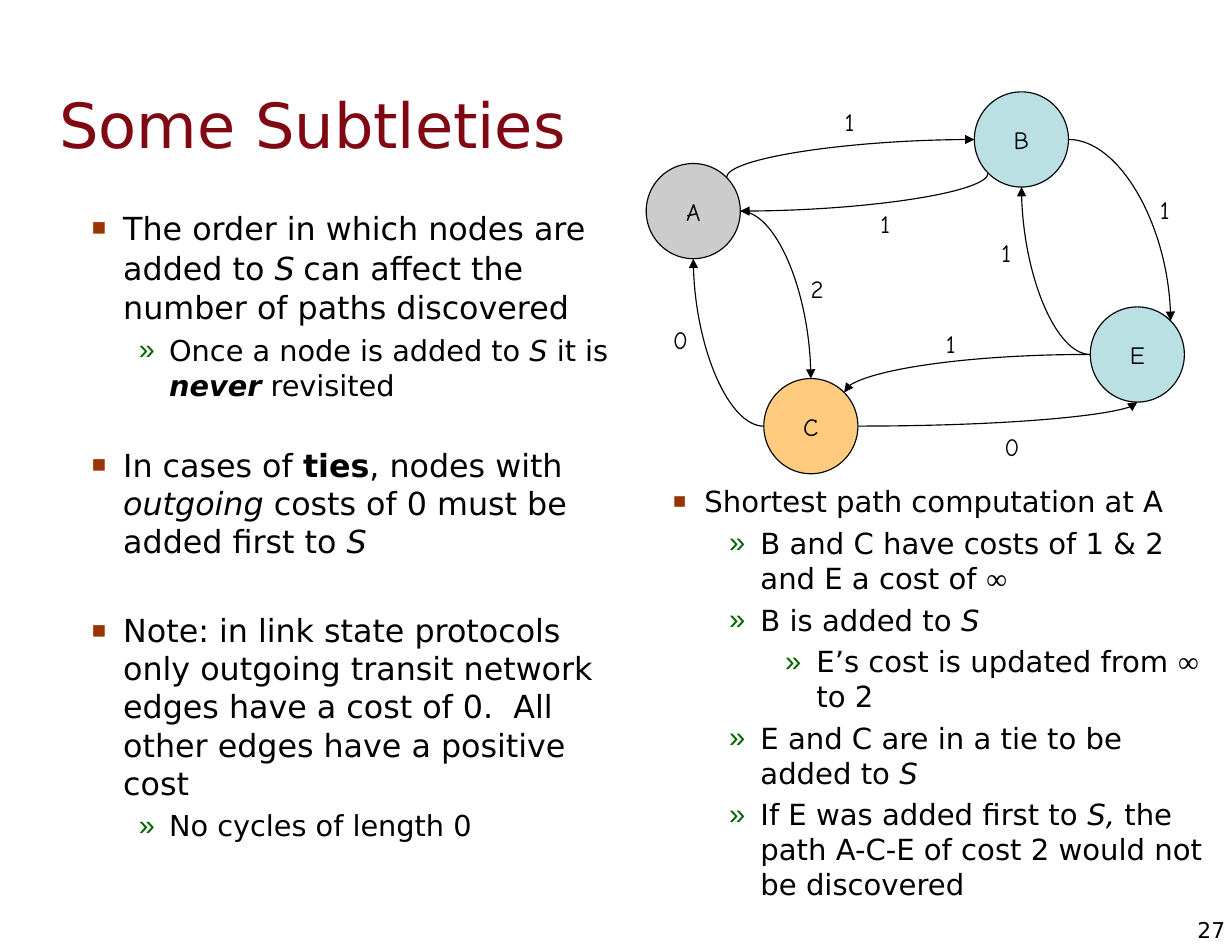
from math import sqrt

from lxml.etree import SubElement
from pptx import Presentation
from pptx.dml.color import RGBColor
from pptx.enum.shapes import MSO_CONNECTOR, MSO_SHAPE
from pptx.enum.text import MSO_ANCHOR as ANCHOR, MSO_AUTO_SIZE as FIT, PP_ALIGN as ALIGN
from pptx.oxml.ns import qn
from pptx.util import Inches, Pt

COLORS = {
    "title": "7F0813", "text": "000000", "square": "993300", "chevron": "006600",
    "root": "CCCCCC", "settled": "BBE0E3", "tied": "FF9900",
}
BODY, HAND, SERIF = "DejaVu Sans", "Comic Neue", "Times New Roman"
COLS, ROWS = 110, 85
D = 1 / sqrt(2)
PORTS = {"N": (0, -1), "S": (0, 1), "E": (1, 0), "W": (-1, 0), "NE": (D, -D), "SW": (-D, D)}
RX, RY = 4.2, 4.25

NODES = {
    "A": (61.9, 18.85, "root", None),
    "B": (91.2, 12.45, "settled", None),
    "E": (101.55, 31.65, "settled", None),
    "C": (72.4, 38.05, "tied", 50),
}
EDGES = [
    ("A", "NE", "B", "W"), ("B", "SW", "A", "E"), ("B", "E", "E", "NE"), ("E", "W", "B", "S"),
    ("E", "W", "C", "NE"), ("C", "E", "E", "S"), ("C", "W", "A", "S"), ("A", "E", "C", "N"),
]
COSTS = [
    ("1", 75.85, 8.9), ("1", 79.05, 18), ("1", 89.85, 20.6), ("1", 84.9, 28.7),
    ("0", 90.35, 37.9), ("2", 72.95, 23.8), ("0", 60.75, 28.4), ("1", 104, 16.8),
]
SUBTLETIES = [
    (0, 0, [("The order in which nodes are added to ", ""), ("S", "i"), (" ", "t"),
            ("can affect the number of paths discovered", "")]),
    (1, 4.3, [("Once a node is added to ", ""), ("S ", "i"), ("it is ", ""),
              ("never", "bi"), (" revisited", "")]),
    (0, 28, [("In cases of ", ""), ("ties", "b"), (", nodes with ", ""), ("outgoing", "i"),
             (" costs of 0 must be added first to ", ""), ("S", "i")]),
    (0, 33, [("Note: in link state protocols only outgoing transit network edges "
              "have a cost of 0.  All other edges have a positive cost", "")]),
    (1, 4.3, [("No cycles of length 0", "")]),
]
COMPUTATION = [
    (0, 0, [("Shortest path computation at A", "")]),
    (1, 4.3, [("B and C have costs of 1 & 2 and E a cost of ", ""), ("∞", "t")]),
    (1, 4.3, [("B is added to ", ""), ("S", "i")]),
    (2, 4.3, [("E’s cost is updated from ", ""), ("∞", "t"), (" to 2", "")]),
    (1, 4.3, [("E and C are in a tie to be added to ", ""), ("S", "i")]),
    (1, 4.3, [("If E was added first to ", ""), ("S,", "i"),
              (" the path A-C-E of cost 2 would not be discovered", "")]),
]


class Deck:
    def __init__(self, prs, layout):
        self.cell_w = prs.slide_width / COLS
        self.cell_h = prs.slide_height / ROWS
        self.s = prs.slides.add_slide(prs.slide_layouts[layout])

    def x(self, cols):
        return round(cols * self.cell_w)

    def y(self, rows):
        return round(rows * self.cell_h)

    def box(self, col, row, cols, rows):
        return self.x(col), self.y(row), self.x(cols), self.y(rows)

    def place(self, sp, box):
        sp.left, sp.top, sp.width, sp.height = self.box(*box)
        return sp

    def frame(self, sp, anchor=ANCHOR.TOP, wrap=True, margins=(0.11, 0.06)):
        tf = sp.text_frame
        tf.word_wrap, tf.auto_size, tf.vertical_anchor = wrap, FIT.NONE, anchor
        tf.margin_left = tf.margin_right = Inches(margins[0])
        tf.margin_top = tf.margin_bottom = Inches(margins[1])
        return tf

    def style(self, r, size, name=BODY, color="text"):
        r.font.size, r.font.name = Pt(size), name
        r.font.color.rgb = RGBColor.from_string(COLORS[color])

    def line(self, tf, text, size, align, name=BODY, color="text"):
        p = tf.paragraphs[0]
        p.text, p.alignment = text, align
        self.style(p.runs[0], size, name, color)

    def title(self, text, box):
        sp = self.place(self.s.shapes.title, box)
        self.line(self.frame(sp, ANCHOR.MIDDLE), text, 40, ALIGN.LEFT, color="title")

    def text(self, text, box, size, align, name=BODY, **frame):
        sp = self.s.shapes.add_textbox(*self.box(*box))
        self.line(self.frame(sp, **frame), text, size, align, name)

    def bullet(self, p, level, indent, hang):
        char, color = ("■", "square") if level == 0 else ("»", "chevron")
        pPr = p._p.get_or_add_pPr()
        pPr.set("marL", str(Inches(indent)))
        pPr.set("indent", str(-Inches(hang)))
        clr = SubElement(pPr, qn("a:buClr"))
        SubElement(clr, qn("a:srgbClr")).set("val", COLORS[color])
        SubElement(pPr, qn("a:buSzPct")).set("val", "75000" if level == 0 else "100000")
        SubElement(pPr, qn("a:buChar")).set("char", char)

    def bullets(self, idx, items, box, sizes, indents, serif_size):
        tf = self.frame(self.place(self.s.placeholders[idx], box))
        for i, (level, before, runs) in enumerate(items):
            p = tf.add_paragraph() if i else tf.paragraphs[0]
            p.level, p.alignment = level, ALIGN.LEFT
            self.bullet(p, level, *indents[level])
            p.space_before, p.space_after = Pt(before), Pt(0)
            for text, marks in runs:
                r = p.add_run()
                r.text = text
                serif = "t" in marks
                self.style(r, serif_size if serif else sizes[level], SERIF if serif else BODY)
                r.font.bold, r.font.italic = "b" in marks, "i" in marks

    def node(self, name, col, row, color, alpha):
        box = self.box(col - RX, row - RY, 2 * RX, 2 * RY)
        sp = self.s.shapes.add_shape(MSO_SHAPE.OVAL, *box)
        sp.shadow.inherit = False
        sp.fill.solid()
        sp.fill.fore_color.rgb = RGBColor.from_string(COLORS[color])
        if alpha:
            clr = sp.fill._xPr.find(qn("a:solidFill"))[0]
            SubElement(clr, qn("a:alpha")).set("val", str(alpha * 1000))
        self.outline(sp)
        self.line(self.frame(sp, ANCHOR.MIDDLE, False), name, 16, ALIGN.CENTER, HAND)

    def outline(self, sp):
        sp.line.color.rgb = RGBColor.from_string(COLORS["text"])
        sp.line.width = Pt(0.75)

    def edge(self, start, end, upright):
        (x1, y1), (x2, y2) = start, end
        points = self.x(x1), self.y(y1), self.x(x2), self.y(y2)
        c = self.s.shapes.add_connector(MSO_CONNECTOR.CURVE, *points)
        spPr = c._element.spPr
        spPr.find(qn("a:prstGeom")).set("prst", "curvedConnector2")
        xfrm = spPr.find(qn("a:xfrm"))
        for flip in ("flipH", "flipV"):
            xfrm.attrib.pop(flip, None)
        if upright:
            turn = 90 if y2 > y1 else 270
            w, h = c.width, c.height
            c.left, c.top = c.left + (w - h) // 2, c.top + (h - w) // 2
            c.width, c.height = h, w
        else:
            turn = 180 if x2 < x1 else 0
            if (x2 < x1) != (y2 < y1):
                xfrm.set("flipV", "1")
        xfrm.set("rot", str(turn * 60000))
        self.outline(c)
        SubElement(c.line._get_or_add_ln(), qn("a:tailEnd")).set("type", "triangle")
        SubElement(spPr, qn("a:effectLst"))


def port(name, side):
    col, row = NODES[name][:2]
    dx, dy = PORTS[side]
    return col + dx * RX, row + dy * RY


def main():
    prs = Presentation()
    prs.slide_width, prs.slide_height = Inches(11), Inches(8.5)
    deck = Deck(prs, 3)
    deck.title("Some Subtleties", (4.2, 3.9, 93.5, 14.2))
    deck.bullets(1, SUBTLETIES, (5.7, 18, 49.8, 60.4), (20.4, 18.5),
                 ((0.42, 0.28), (0.83, 0.27)), 22.2)
    deck.bullets(2, COMPUTATION, (57.6, 42.6, 50.9, 40.4), (18.7,) * 3,
                 [(0.42 + 0.5 * level, 0.28) for level in range(3)], 18.7)
    deck.text("27", (106, 81.8, 3.4, 2.4), 14, ALIGN.RIGHT,
              anchor=ANCHOR.MIDDLE, wrap=False, margins=(0, 0))
    for name, node in NODES.items():
        deck.node(name, *node)
    for tail, out, head, into in EDGES:
        deck.edge(port(tail, out), port(head, into), out in ("NE", "SW"))
    for cost, center, row in COSTS:
        deck.text(cost, (center - 5, row, 10, 3.8), 16, ALIGN.CENTER, HAND)
    prs.save("out.pptx")


if __name__ == "__main__":
    main()
